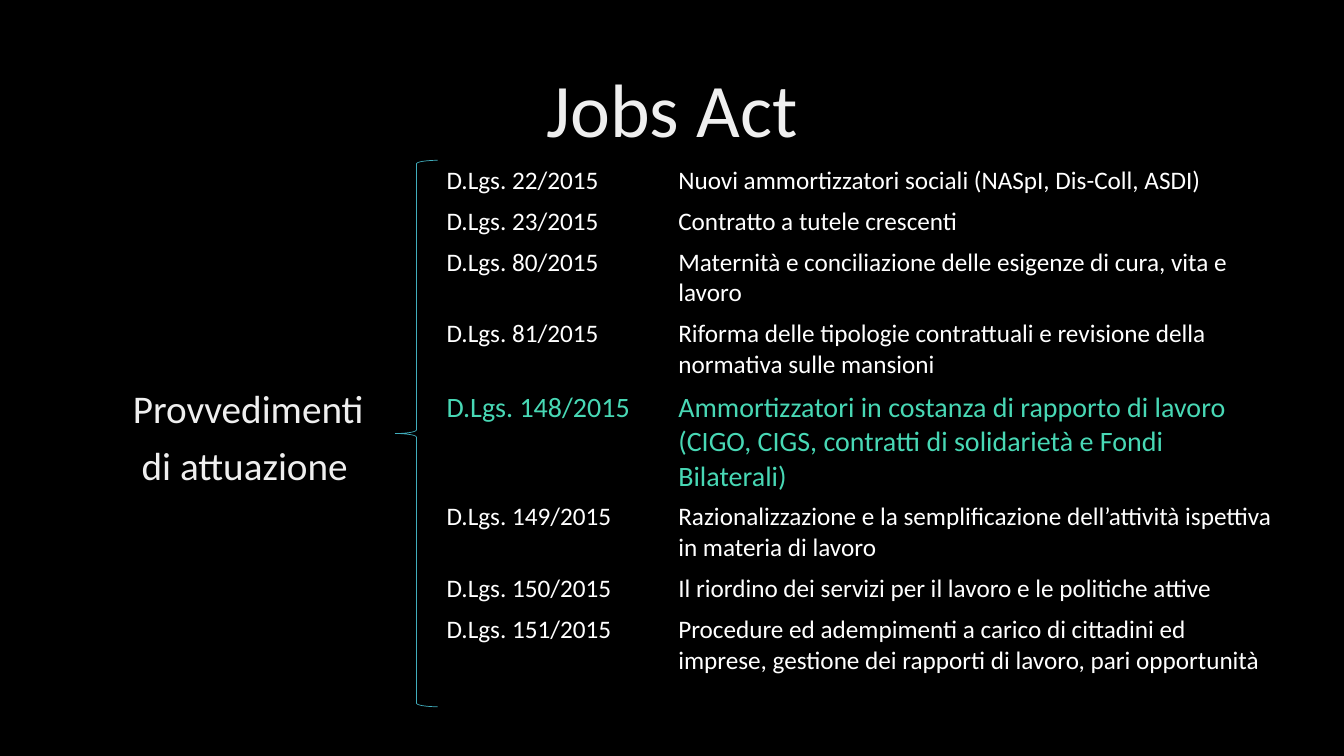
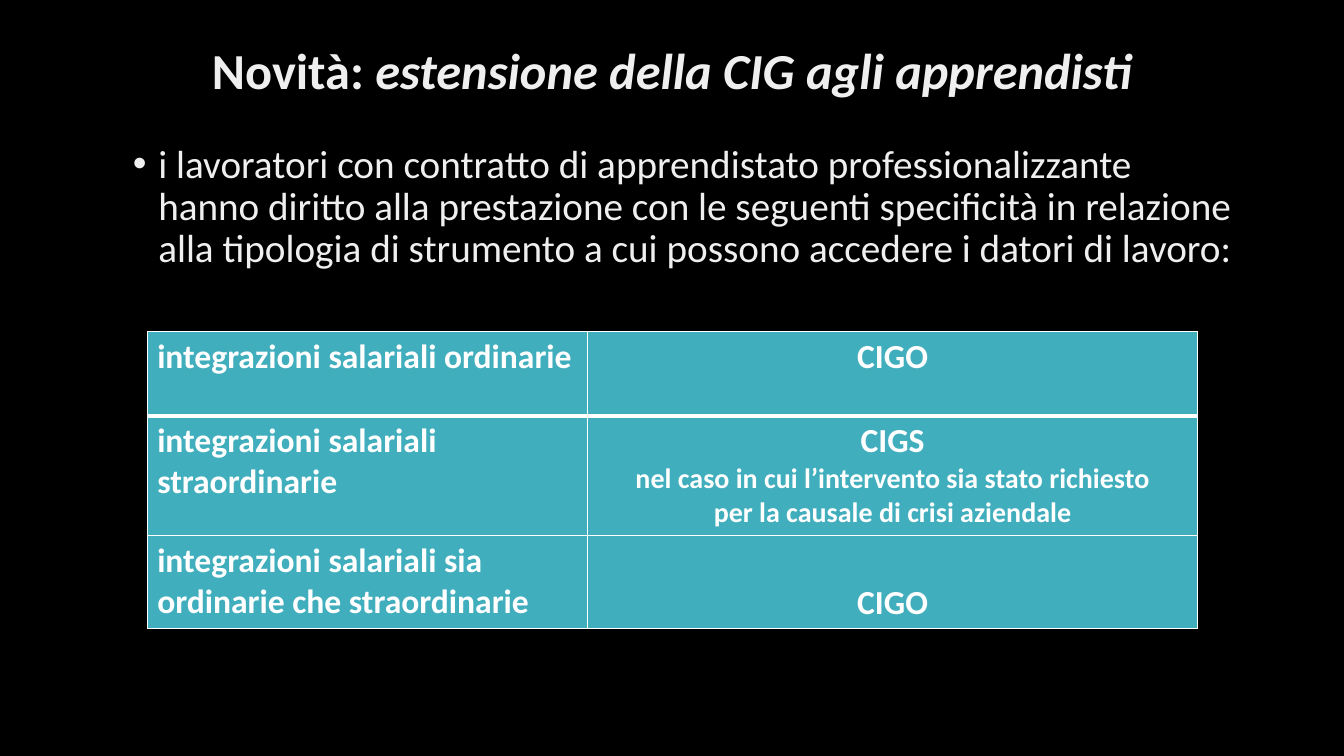
import collections

import lxml.etree
import pptx
import pptx.dml.color
import pptx.enum.shapes
import pptx.enum.text
import pptx.oxml.ns
import pptx.util

Cm = pptx.util.Cm
Pt = pptx.util.Pt
qn = pptx.oxml.ns.qn
ALIGN = pptx.enum.text.PP_ALIGN
ANCHOR = pptx.enum.text.MSO_ANCHOR

Box = collections.namedtuple("Box", "left top width height")

FONT = "Calibri"
BLACK, WHITE, PALE = "000000", "FFFFFF", "EFEFEF"
TEAL, MINT = "41AEBD", "48D8B5"
NO_STYLE = "{2D5ABB26-0587-4C30-8999-92F81FD0307C}"
LINE_SPACING = 0.9
HIGHLIGHTED = "148/2015"

# Number, subject, row height in cm
DECREES = [
    ("22/2015", "Nuovi ammortizzatori sociali (NASpI, Dis-Coll, ASDI)", 1.03),
    ("23/2015", "Contratto a tutele crescenti", 1.03),
    ("80/2015", "Maternità e conciliazione delle esigenze di cura, vita e lavoro", 1.81),
    ("81/2015", "Riforma delle tipologie contrattuali e revisione della "
                "normativa sulle mansioni", 1.81),
    (HIGHLIGHTED, "Ammortizzatori in costanza di rapporto di lavoro (CIGO, CIGS, "
                  "contratti di solidarietà e Fondi Bilaterali)", 2.8),
    ("149/2015", "Razionalizzazione e la semplificazione dell’attività ispettiva "
                 "in materia di lavoro", 1.81),
    ("150/2015", "Il riordino dei servizi per il lavoro e le politiche attive", 1.03),
    ("151/2015", "Procedure ed adempimenti a carico di cittadini ed imprese, "
                 "gestione dei rapporti di lavoro, pari opportunità", 1.81),
]

# Kind of integration, instrument lines, row height in cm
INTEGRATIONS = [
    ("integrazioni salariali ordinarie", ["CIGO"], 2.13),
    ("integrazioni salariali straordinarie",
     ["CIGS", "nel caso in cui l’intervento sia stato richiesto",
      "per la causale di crisi aziendale"], 3.02),
    ("integrazioni salariali sia ordinarie che straordinarie", ["CIGO"], 2.34),
]


def color(value):
    return pptx.dml.color.RGBColor.from_string(value)


def lengths(box):
    return [Cm(value) for value in box]


def format_font(font, size, tint, bold=False, italic=False):
    font.name, font.size = FONT, Pt(size)
    font.bold, font.italic = bold, italic
    font.color.rgb = color(tint)


def add_text_frame(page, box):
    frame = page.shapes.add_textbox(*lengths(box)).text_frame
    frame.word_wrap = True
    return frame


def add_title(page, box, parts, size):
    """Add a centred title from (text, bold, italic) parts."""
    frame = add_text_frame(page, box)
    frame.vertical_anchor = ANCHOR.MIDDLE
    para = frame.paragraphs[0]
    para.alignment = ALIGN.CENTER
    para.line_spacing = LINE_SPACING
    for text, bold, italic in parts:
        span = para.add_run()
        span.text = text
        format_font(span.font, size, PALE, bold, italic)


def add_body(page, box, lines):
    frame = add_text_frame(page, box)
    frame.text = "\n".join(lines)
    for index, para in enumerate(frame.paragraphs):
        para.line_spacing = LINE_SPACING
        if index:
            para.space_before = Pt(10)
        format_font(para.runs[0].font, 28, PALE)
    return frame


def indent(para, left, first=0):
    properties = para._p.get_or_add_pPr()
    properties.set("marL", str(Cm(left)))
    properties.set("indent", str(Cm(first)))
    return properties


def add_plain_table(page, box, widths, heights):
    """Add a table without style, with the given column widths and row heights."""
    table = page.shapes.add_table(len(heights), len(widths), *lengths(box)).table
    table.first_row = table.horz_banding = False
    table._tbl.tblPr.find(qn("a:tableStyleId")).text = NO_STYLE
    for column, width in zip(table.columns, widths):
        column.width = Cm(width)
    for row, height in zip(table.rows, heights):
        row.height = Cm(height)
    return table


def set_borders(cell, **widths):
    """Draw white borders; keys are L, R, T, B in that order, widths in points."""
    properties = cell._tc.get_or_add_tcPr()
    for position, (side, width) in enumerate(widths.items()):
        line = lxml.etree.Element(qn(f"a:ln{side}"), w=str(Pt(width)))
        fill = lxml.etree.SubElement(line, qn("a:solidFill"))
        lxml.etree.SubElement(fill, qn("a:srgbClr"), val=WHITE)
        properties.insert(position, line)


def add_decree_table(page, box):
    widths = [5.84, box.width - 5.84]
    table = add_plain_table(page, box, widths, [height for *_, height in DECREES])
    for row, (number, subject, _) in zip(table.rows, DECREES):
        size, tint = (20, MINT) if number == HIGHLIGHTED else (18, WHITE)
        for cell, text in zip(row.cells, (f"D.Lgs. {number}", subject)):
            cell.fill.background()
            cell.text_frame.text = text
            format_font(cell.text_frame.paragraphs[0].runs[0].font, size, tint)


def add_integration_table(page, box):
    widths = [11.1, box.width - 11.1]
    table = add_plain_table(page, box, widths, [height for *_, height in INTEGRATIONS])
    last = len(INTEGRATIONS) - 1
    for index, (kind, instrument, _) in enumerate(INTEGRATIONS):
        for column, lines in enumerate(([kind], instrument)):
            cell = table.cell(index, column)
            cell.fill.solid()
            cell.fill.fore_color.rgb = color(TEAL)
            set_borders(cell, L=1, R=1, T=3 if index == 1 else 1,
                        B=3 if index == 0 else 1)
            cell.text_frame.text = "\n".join(lines)
            for order, para in enumerate(cell.text_frame.paragraphs):
                para.alignment = ALIGN.CENTER if column else ALIGN.LEFT
                format_font(para.runs[0].font, 20 if order else 24, WHITE, bold=True)
    table.cell(last, 1).vertical_anchor = ANCHOR.BOTTOM


def add_brace(page, box):
    brace = page.shapes.add_shape(
        pptx.enum.shapes.MSO_SHAPE.LEFT_BRACE, *lengths(box))
    brace.shadow.inherit = False
    brace.fill.background()
    brace.line.color.rgb = color(TEAL)
    brace.line.width = Pt(0.5)


def build_decrees(page):
    add_title(page, Box(2.34, 1.02, 29.2, 3.68), [("Jobs Act", False, False)], 54)
    label = add_body(page, Box(3.1, 9.7, 6.8, 3),
                     ["Provvedimenti", "di attuazione"])
    indent(label.paragraphs[1], 0.22)
    add_decree_table(page, Box(11, 4.04, 21.3, 13.13))
    add_brace(page, Box(9.96, 4.04, 1.07, 13.77))


def build_apprentices(page):
    add_title(page, Box(2.34, 0, 29.2, 3.68),
              [("Novità: ", True, False),
               ("estensione della CIG agli apprendisti", True, True)], 36)
    body = add_body(page, Box(3.1, 3.51, 28.3, 3.6), [
        "i lavoratori con contratto di apprendistato professionalizzante hanno "
        "diritto alla prestazione con le seguenti specificità in relazione alla "
        "tipologia di strumento a cui possono accedere i datori di lavoro:"])
    properties = indent(body.paragraphs[0], 0.64, -0.64)
    lxml.etree.SubElement(properties, qn("a:buFont"), typeface="Arial")
    lxml.etree.SubElement(properties, qn("a:buChar"), char="•")
    add_integration_table(page, Box(3.71, 8.35, 26.47, 7.49))


def main():
    deck = pptx.Presentation()
    deck.slide_width, deck.slide_height = Cm(33.87), Cm(19.05)
    background = deck.slide_master.background.fill
    background.solid()
    background.fore_color.rgb = color(BLACK)
    for build in (build_decrees, build_apprentices):
        build(deck.slides.add_slide(deck.slide_layouts[6]))
    deck.save("out.pptx")


if __name__ == "__main__":
    main()
